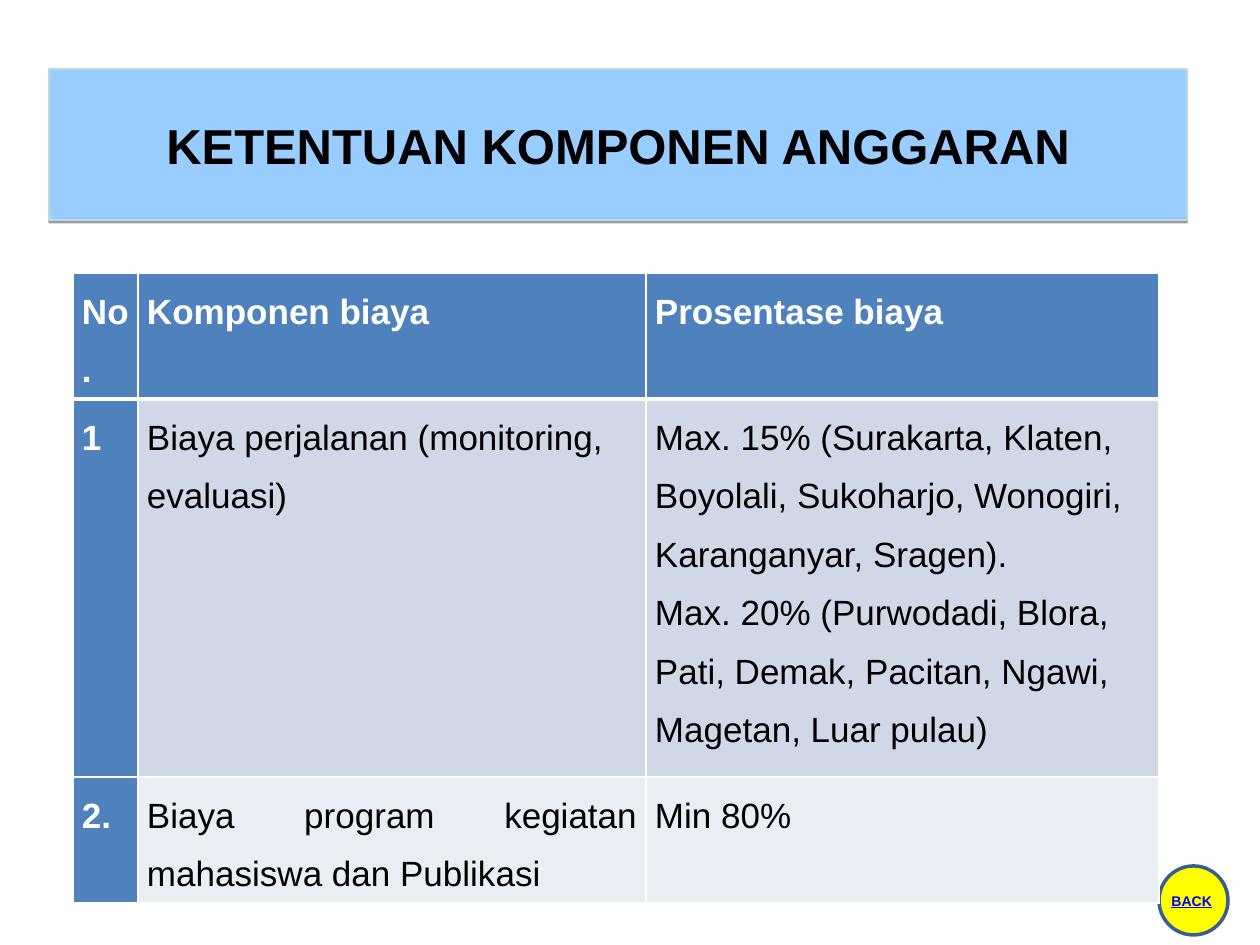
from lxml.etree import SubElement
from pptx import Presentation
from pptx.dml.color import RGBColor
from pptx.enum.shapes import MSO_SHAPE
from pptx.enum.text import MSO_ANCHOR, PP_ALIGN
from pptx.oxml import parse_xml
from pptx.oxml.ns import nsdecls, qn
from pptx.util import Emu, Pt

PX = 914400 // 126
THEME = {
    "font": "Arial",
    "banner": "99CCFF", "banner_line": "B6DCDF",
    "button": "FFFF00", "button_line": "3A5F8C", "link": "0000FF",
    "header": "4F81BD", "bands": ["D0D8E8", "E9EDF4"],
    "light": "FFFFFF", "dark": "000000",
    "title_size": 28, "table_size": 20, "button_size": 8,
}


def px(*lengths):
    return [Emu(length * PX) for length in lengths]


def write(para, text, size, color, **font_values):
    span = para.add_run()
    span.text = text
    span.font.color.rgb = RGBColor.from_string(color)
    values = {"name": THEME["font"], "size": Pt(size), **font_values}
    for name, value in values.items():
        setattr(span.font, name, value)


deck = Presentation()
deck.slide_width, deck.slide_height = px(1260, 945)
page = deck.slides.add_slide(deck.slide_layouts[5])

# Title banner
title = page.shapes.title
title.left, title.top, title.width, title.height = px(49, 69, 1138, 151)
title.fill.solid()
title.fill.fore_color.rgb = RGBColor.from_string(THEME["banner"])
title.line.color.rgb = RGBColor.from_string(THEME["banner_line"])
title.line.width = Pt(0.75)
title.text_frame.vertical_anchor = MSO_ANCHOR.MIDDLE
title_para = title.text_frame.paragraphs[0]
title_para.alignment = PP_ALIGN.CENTER
write(title_para, "KETENTUAN KOMPONEN ANGGARAN", THEME["title_size"], THEME["dark"], bold=True)
title._element.spPr.append(parse_xml(
    f'<a:effectLst {nsdecls("a")}>'
    '<a:outerShdw blurRad="0" dist="20320" dir="5400000" rotWithShape="0">'
    f'<a:srgbClr val="{THEME["dark"]}"><a:alpha val="38000"/></a:srgbClr>'
    '</a:outerShdw></a:effectLst>'))

# Back button
button = page.shapes.add_group_shape()
circle = button.shapes.add_shape(MSO_SHAPE.OVAL, *px(1159, 866, 69, 69))
circle.shadow.inherit = False
circle.fill.solid()
circle.fill.fore_color.rgb = RGBColor.from_string(THEME["button"])
circle.line.color.rgb = RGBColor.from_string(THEME["button_line"])
circle.line.width = Pt(2)
label = button.shapes.add_textbox(*px(1159, 886, 69, 30))
label.text_frame.word_wrap = False
write(label.text_frame.paragraphs[0], "BACK", THEME["button_size"], THEME["link"],
      bold=True, underline=True)

# Budget table: each cell is a list of paragraphs
rows = [
    [["No."], ["Komponen biaya"], ["Prosentase biaya"]],
    [["1"], ["Biaya perjalanan (monitoring, evaluasi)"],
     ["Max. 15% (Surakarta, Klaten, Boyolali, Sukoharjo, Wonogiri, Karanganyar, Sragen).",
      "Max. 20% (Purwodadi, Blora, Pati, Demak, Pacitan, Ngawi, Magetan, Luar pulau)"]],
    [["2."], ["Biaya program kegiatan mahasiswa dan Publikasi"], ["Min 80%"]],
]
frame = page.shapes.add_table(3, 3, *px(73, 273, 1086, 610))
table = frame.table
for column, width in zip(table.columns, px(65, 508, 513)):
    column.width = width
for row, height in zip(table.rows, px(79, 315, 79)):
    row.height = height
frame.height = px(610)[0]

side_margin, no_margin = px(9, 0)
cell_format = {"margin_left": side_margin, "margin_right": side_margin,
               "margin_top": no_margin, "margin_bottom": no_margin}
for r, row in enumerate(rows):
    for c, paragraphs in enumerate(row):
        cell = table.cell(r, c)
        for name, value in cell_format.items():
            setattr(cell, name, value)
        heading = r == 0 or c == 0
        properties = cell._tc.get_or_add_tcPr()
        for side in "LRTB":
            thick = (r, side) in ((0, "B"), (1, "T"))
            border = SubElement(properties, qn(f"a:ln{side}"), w=str(Pt(3 if thick else 1)))
            line_fill = SubElement(border, qn("a:solidFill"))
            SubElement(line_fill, qn("a:srgbClr"), val=THEME["light"])
        cell.fill.solid()
        fill = THEME["header"] if heading else THEME["bands"][r - 1]
        cell.fill.fore_color.rgb = RGBColor.from_string(fill)
        for i, text in enumerate(paragraphs):
            para = cell.text_frame.paragraphs[0] if i == 0 else cell.text_frame.add_paragraph()
            para.line_spacing = 1.5
            para.alignment = PP_ALIGN.LEFT if r == 1 and c > 0 else PP_ALIGN.JUSTIFY
            color = THEME["light"] if heading else THEME["dark"]
            write(para, text, THEME["table_size"], color, bold=heading)

deck.save("out.pptx")
